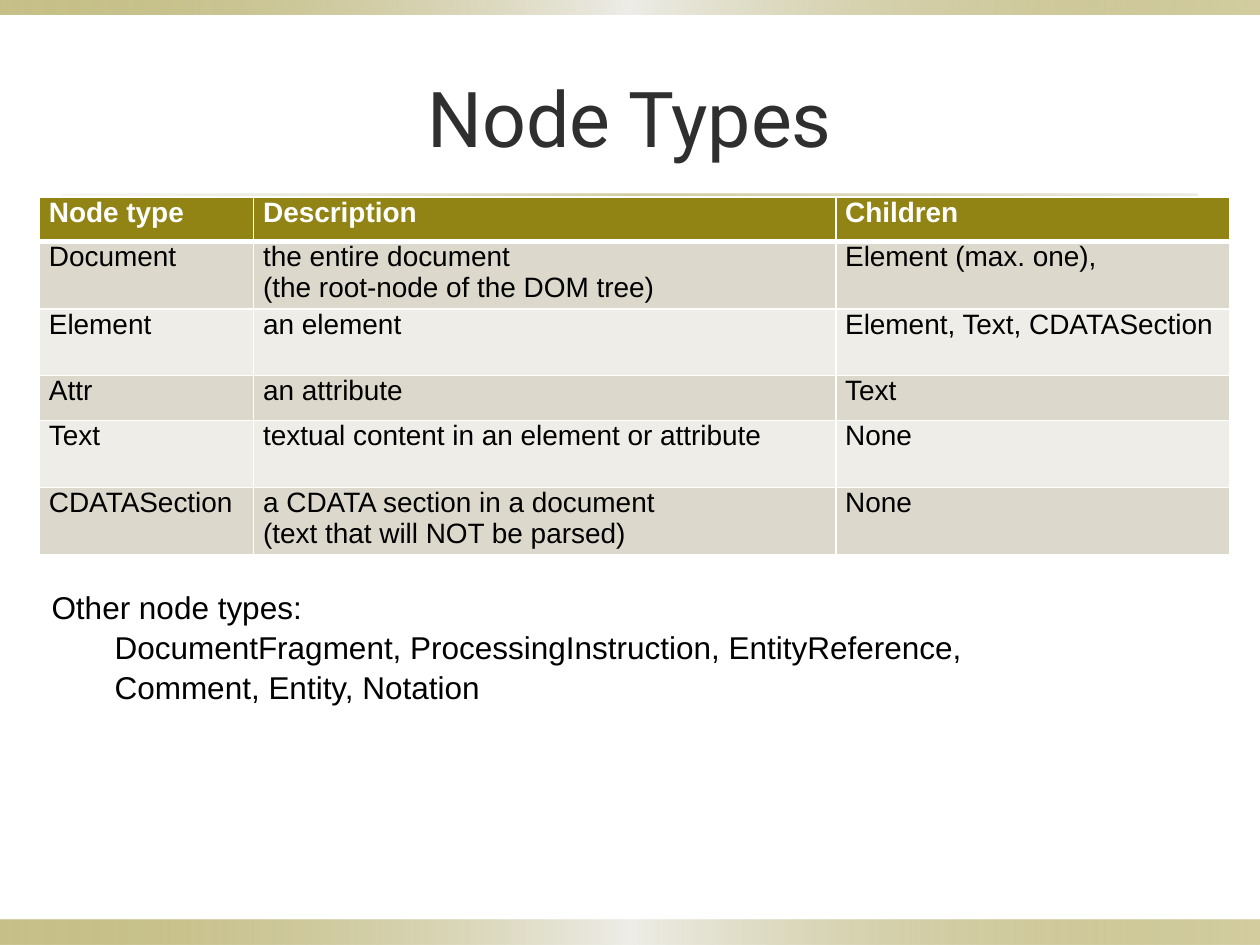
from lxml import etree
from pptx import Presentation
from pptx.dml.color import RGBColor
from pptx.enum.shapes import MSO_SHAPE
from pptx.enum.text import MSO_ANCHOR, PP_ALIGN
from pptx.oxml.ns import qn
from pptx.util import Pt

RECTANGLE = MSO_SHAPE.RECTANGLE
MIDDLE, TOP = MSO_ANCHOR.MIDDLE, MSO_ANCHOR.TOP
CENTER, LEFT = PP_ALIGN.CENTER, PP_ALIGN.LEFT

COLORS = {
    "olive": "918415",
    "sand": "DCD9CC",
    "pale": "EEEDE8",
    "title": "2F2F2F",
    "black": "000000",
    "white": "FFFFFF",
}

# Gradient stops: position, colour, opacity (all in percent but the colour)
BAND = [(0, "olive", 50), (50, "pale", 100), (100, "olive", 40)]
RULE = [(0, "sand", 20), (50, "olive", 40), (100, "sand", 50)]

COLUMN_WIDTHS = [122.4, 332.6, 225.4]
ROW_HEIGHTS = [25.6, 38.4, 38.2, 25.6, 38.2, 38.4]
NODE_TYPES = [
    ("Node type", "Description", "Children"),
    ("Document", "the entire document\n(the root-node of the DOM tree)",
     "Element (max. one),"),
    ("Element", "an element", "Element, Text, CDATASection"),
    ("Attr", "an attribute", "Text"),
    ("Text", "textual content in an element or attribute", "None"),
    ("CDATASection",
     "a CDATA section in a document\n(text that will NOT be parsed)", "None"),
]

# Text, line spacing, left indent
OTHER_TYPES = [
    ("Other node types:", 1.57, 0),
    ("DocumentFragment, ProcessingInstruction, EntityReference,", 1.05, 36),
    ("Comment, Entity, Notation", 1.05, 36),
]


def rgb(name):
    return RGBColor.from_string(COLORS[name])


def write(para, text, name, size, color, bold=False):
    """Add text to a paragraph, with a line break at each newline."""
    for index, line in enumerate(text.split("\n")):
        if index:
            para.add_line_break()
            line_break = para._p.findall(qn("a:br"))[-1]
            etree.SubElement(line_break, qn("a:rPr"), sz=str(size * 100))
        span = para.add_run()
        span.text = line
        values = {"name": name, "size": Pt(size), "bold": bold}
        for key, value in values.items():
            setattr(span.font, key, value)
        span.font.color.rgb = rgb(color)


def add_gradient_bar(page, left, top, width, height, stops):
    bar = page.shapes.add_shape(RECTANGLE, Pt(left), Pt(top), Pt(width), Pt(height))
    bar.shadow.inherit = False
    bar.line.fill.background()
    bar.fill.gradient()
    bar.fill.gradient_angle = 0
    stop_list = next(bar._element.spPr.iter(qn("a:gsLst")))
    for stop in list(stop_list):
        stop_list.remove(stop)
    for position, color, opacity in stops:
        stop = etree.SubElement(stop_list, qn("a:gs"), pos=str(position * 1000))
        fill = etree.SubElement(stop, qn("a:srgbClr"), val=COLORS[color])
        etree.SubElement(fill, qn("a:alpha"), val=str(opacity * 1000))


def add_text_box(page, left, top, width, height, anchor):
    box = page.shapes.add_textbox(Pt(left), Pt(top), Pt(width), Pt(height))
    box.text_frame.word_wrap = True
    box.text_frame.vertical_anchor = anchor
    return box.text_frame


def set_borders(cell, widths):
    """Draw white borders; they must come before the fill of the cell."""
    properties = cell._tc.get_or_add_tcPr()
    for side, width in widths.items():
        line = etree.SubElement(properties, qn(f"a:ln{side}"), w=str(Pt(width)))
        fill = etree.SubElement(line, qn("a:solidFill"))
        etree.SubElement(fill, qn("a:srgbClr"), val=COLORS["white"])


def fill_cell(cell, text, row):
    header = row == 0
    margins = {"margin_left": Pt(5.4), "margin_top": 0,
               "margin_right": 0, "margin_bottom": 0}
    for key, value in margins.items():
        setattr(cell, key, value)
    set_borders(cell, {"L": 1, "R": 1, "T": 3 if row == 1 else 1,
                       "B": 3 if header else 1})
    cell.fill.solid()
    cell.fill.fore_color.rgb = rgb("olive" if header else "sand" if row % 2 else "pale")
    write(cell.text_frame.paragraphs[0], text, "Arial", 16,
          "white" if header else "black", header)


def add_node_table(page, left, top):
    frame = page.shapes.add_table(
        len(ROW_HEIGHTS), len(COLUMN_WIDTHS), Pt(left), Pt(top),
        Pt(sum(COLUMN_WIDTHS)), Pt(sum(ROW_HEIGHTS)))
    table = frame.table
    for column, width in zip(table.columns, COLUMN_WIDTHS):
        column.width = Pt(width)
    for row, height in zip(table.rows, ROW_HEIGHTS):
        row.height = Pt(height)
    for row, texts in enumerate(NODE_TYPES):
        for column, text in enumerate(texts):
            fill_cell(table.cell(row, column), text, row)


def add_other_types(page):
    frame = add_text_box(page, 22.4, 320.4, 544.3, 83.5, TOP)
    for index, (text, spacing, indent) in enumerate(OTHER_TYPES):
        para = frame.add_paragraph() if index else frame.paragraphs[0]
        para.alignment = LEFT
        para.line_spacing = spacing
        if indent:
            para.level = 1
            para._p.get_or_add_pPr().set("marL", str(Pt(indent)))
        write(para, text, "Arial", 18, "black")


def main():
    deck = Presentation()
    deck.slide_width, deck.slide_height = Pt(720), Pt(540)
    page = deck.slides.add_slide(deck.slide_layouts[6])

    # Bands at the edges and the rule under the title
    add_gradient_bar(page, 0, 525.6, 720, 14.4, BAND)
    add_gradient_bar(page, 0, 0, 720, 8.6, BAND)
    add_gradient_bar(page, 36, 110.9, 648, 1.2, RULE)

    # Title
    title = add_text_box(page, 36, 21.6, 648, 90, MIDDLE).paragraphs[0]
    title.alignment = CENTER
    write(title, "Node Types", "Roboto", 44, "title")

    # Table and the note below it
    add_node_table(page, 22.6, 112.5)
    add_other_types(page)

    deck.save("out.pptx")


if __name__ == "__main__":
    main()
